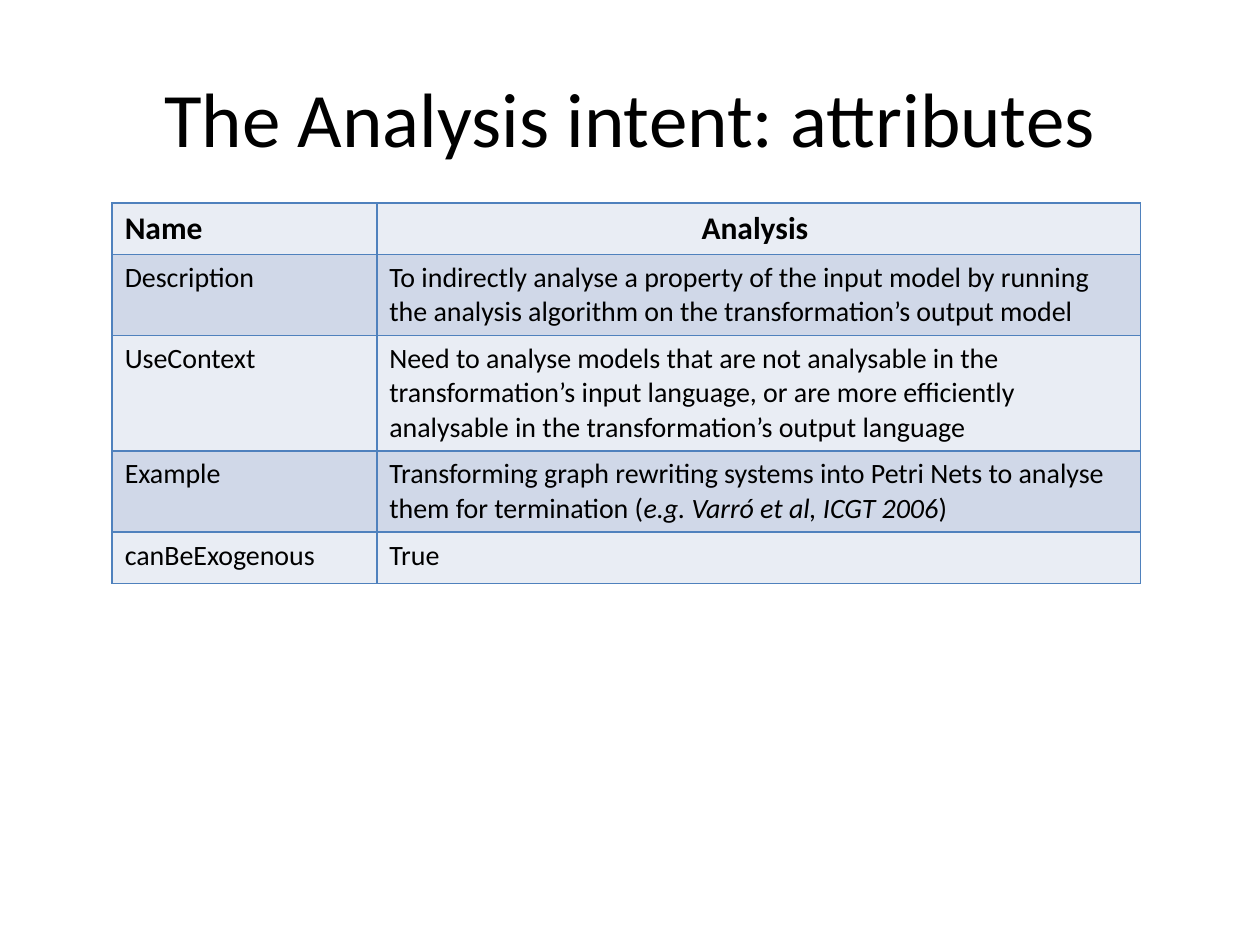
from dataclasses import dataclass

from lxml.etree import SubElement
from pptx import Presentation
from pptx.dml.color import RGBColor
from pptx.enum.text import MSO_ANCHOR, PP_ALIGN as Align
from pptx.oxml.ns import qn
from pptx.table import _Cell as Cell
from pptx.util import Inches, Pt


@dataclass(frozen=True)
class Theme:
    font: str = "Calibri"
    ink: str = "000000"
    border: str = "4F81BD"
    bands: tuple[str, str] = ("E9EDF4", "D0D8E8")
    title_size: int = 44
    header_size: int = 18
    body_size: int = 16
    border_width: int = 1


@dataclass(frozen=True)
class Phrase:
    text: str
    italic: bool = False


@dataclass(frozen=True)
class Attribute:
    name: str
    value: tuple[Phrase, ...]


THEME = Theme()
TITLE = "The Analysis intent: attributes"
COLUMN_WIDTHS = (2.1, 6.06)
ROW_HEIGHT = 0.41
ATTRIBUTES = (
    Attribute("Name", (Phrase("Analysis "),)),
    Attribute("Description", (Phrase(
        "To indirectly analyse a property of the input model by running "
        "the analysis algorithm on the transformation’s output model"),)),
    Attribute("UseContext", (Phrase(
        "Need to analyse models that are not analysable in the "
        "transformation’s input language, or are more efficiently "
        "analysable in the transformation’s output language"),)),
    Attribute("Example", (
        Phrase("Transforming graph rewriting systems into Petri Nets to analyse "
               "them for termination ("),
        Phrase("e.g. Varró et al, ICGT 2006", italic=True),
        Phrase(")"))),
    Attribute("canBeExogenous", (Phrase("True"),)),
)


def add_run(paragraph, phrase: Phrase, size: int, bold: bool = False) -> None:
    run = paragraph.add_run()
    run.text = phrase.text
    font = run.font
    font.name, font.size = THEME.font, Pt(size)
    font.bold, font.italic = bold, phrase.italic
    font.color.rgb = RGBColor.from_string(THEME.ink)


def add_borders(cell: Cell) -> None:
    """Line all four sides; call before filling, as the schema puts lines first."""
    properties = cell._tc.get_or_add_tcPr()
    for side in ("a:lnL", "a:lnR", "a:lnT", "a:lnB"):
        line = SubElement(properties, qn(side), w=str(Pt(THEME.border_width)))
        fill = SubElement(line, qn("a:solidFill"))
        SubElement(fill, qn("a:srgbClr"), val=THEME.border)


def write_cell(cell: Cell, phrases: tuple[Phrase, ...], band: str,
               header: bool, align: Align) -> None:
    add_borders(cell)
    cell.fill.solid()
    cell.fill.fore_color.rgb = RGBColor.from_string(band)
    paragraph = cell.text_frame.paragraphs[0]
    paragraph.alignment = align
    size = THEME.header_size if header else THEME.body_size
    for phrase in phrases:
        add_run(paragraph, phrase, size, bold=header)


def add_title(slide) -> None:
    title = slide.shapes.title
    title.left, title.top = Inches(0.5), Inches(0.3)
    title.width, title.height = Inches(9), Inches(1.25)
    title.text_frame.vertical_anchor = MSO_ANCHOR.MIDDLE
    paragraph = title.text_frame.paragraphs[0]
    paragraph.alignment = Align.CENTER
    add_run(paragraph, Phrase(TITLE), THEME.title_size)


def add_attribute_table(slide) -> None:
    table = slide.shapes.add_table(
        len(ATTRIBUTES), len(COLUMN_WIDTHS), Inches(0.89), Inches(1.61),
        Inches(sum(COLUMN_WIDTHS)), Inches(ROW_HEIGHT * len(ATTRIBUTES))).table
    table.first_row = table.horz_banding = False
    for column, width in zip(table.columns, COLUMN_WIDTHS):
        column.width = Inches(width)
    for index, attribute in enumerate(ATTRIBUTES):
        table.rows[index].height = Inches(ROW_HEIGHT)
        header = index == 0
        band = THEME.bands[index % 2]
        value_align = Align.CENTER if header else Align.LEFT
        write_cell(table.cell(index, 0), (Phrase(attribute.name),), band, header, Align.LEFT)
        write_cell(table.cell(index, 1), attribute.value, band, header, value_align)


def main() -> None:
    deck = Presentation()
    deck.slide_width, deck.slide_height = Inches(10), Inches(7.5)
    title_only = deck.slide_layouts[5]
    slide = deck.slides.add_slide(title_only)
    add_title(slide)
    add_attribute_table(slide)
    deck.save("out.pptx")


if __name__ == "__main__":
    main()
